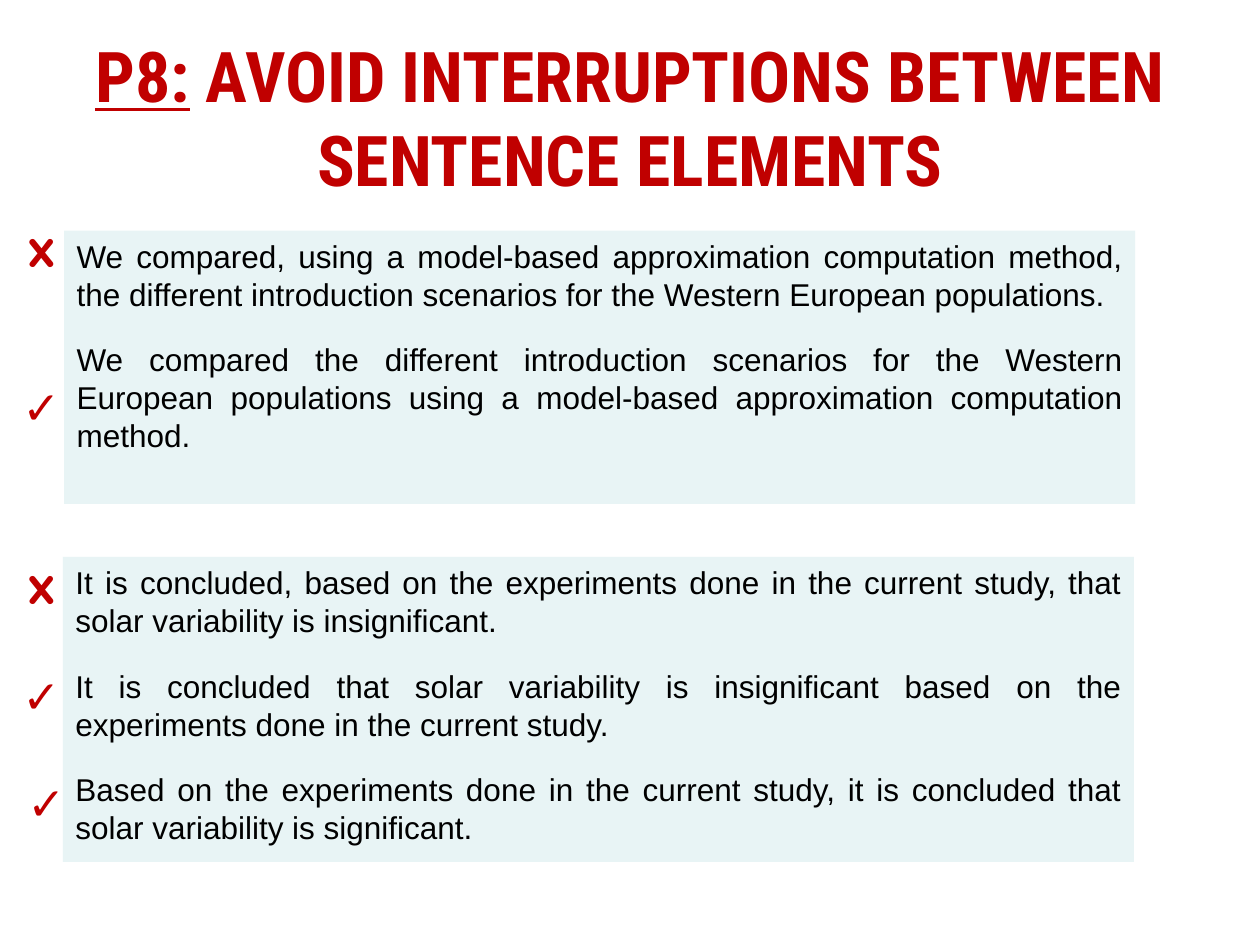
from dataclasses import dataclass
from typing import Any

from lxml.etree import SubElement
from pptx import Presentation
from pptx.dml.color import RGBColor
from pptx.enum.shapes import MSO_SHAPE as Shape
from pptx.enum.text import MSO_ANCHOR as Anchor, PP_ALIGN as Align
from pptx.oxml.ns import qn
from pptx.util import Inches, Pt

RED = RGBColor(0xC0, 0x00, 0x00)
BLACK = RGBColor(0x00, 0x00, 0x00)
PALE_TEAL = RGBColor(0xBB, 0xE0, 0xE3)

FIRST_EXAMPLE = [
    "We compared, using a model-based approximation computation method, "
    "the different introduction scenarios for the Western European populations.",
    "We compared the different introduction scenarios for the Western European "
    "populations using a model-based approximation computation method.",
]
SECOND_EXAMPLE = [
    "It is concluded, based on the experiments done in the current study, "
    "that solar variability is insignificant.",
    "It is concluded that solar variability is insignificant "
    "based on the experiments done in the current study.",
    "Based on the experiments done in the current study, "
    "it is concluded that solar variability is significant.",
]


@dataclass
class SlideWriter:
    """Draws the title, example panels and verdict marks on one page."""

    page: Any
    title_font: str = "Roboto Condensed"
    body_font: str = "Arial"
    mark_font: str = "Quicksand"

    def style(self, para, name, size, color, bold=False):
        font = para.font
        font.name, font.size, font.bold = name, Pt(size), bold
        font.color.rgb = color

    def textbox(self, left, top, width, height):
        box = self.page.shapes.add_textbox(
            Inches(left), Inches(top), Inches(width), Inches(height))
        box.text_frame.word_wrap = True
        return box.text_frame

    def title(self, label, wording):
        frame = self.textbox(0.5, 0.3, 9, 1.25)
        frame.vertical_anchor = Anchor.MIDDLE
        para = frame.paragraphs[0]
        para.alignment = Align.CENTER
        self.style(para, self.title_font, 40, RED, bold=True)
        span = para.add_run()
        span.text = label
        span.font.underline = True
        para.add_run().text = wording

    def panel(self, left, top, height, sentences):
        box = self.page.shapes.add_shape(
            Shape.RECTANGLE, Inches(left), Inches(top), Inches(8.5), Inches(height))
        box.shadow.inherit = False
        box.line.fill.background()
        box.fill.solid()
        box.fill.fore_color.rgb = PALE_TEAL
        color = box.fill._xPr.find(qn("a:solidFill"))[0]
        SubElement(color, qn("a:alpha")).set("val", "33000")
        frame = box.text_frame
        frame.word_wrap = True
        frame.vertical_anchor = Anchor.TOP
        for index, sentence in enumerate(sentences):
            para = frame.paragraphs[0] if index == 0 else frame.add_paragraph()
            para.text = sentence
            para.alignment = Align.JUSTIFY
            if index:
                para.space_before = Pt(16)
            self.style(para, self.body_font, 18, BLACK)

    def mark(self, symbol, left, top, width, height, size):
        para = self.textbox(left, top, width, height).paragraphs[0]
        para.text = symbol
        self.style(para, self.mark_font, size, RED, bold=True)

    def cross(self, top):
        self.mark("x", 0.13, top, 0.37, 0.61, 30)

    def check(self, left, top):
        self.mark("✓", left, top, 0.56, 0.54, 26)


def main():
    deck = Presentation()
    deck.slide_width, deck.slide_height = Inches(10), Inches(7.5)
    writer = SlideWriter(deck.slides.add_slide(deck.slide_layouts[6]))
    writer.title("P8:", " AVOID INTERRUPTIONS BETWEEN SENTENCE ELEMENTS")
    writer.panel(0.51, 1.83, 2.17, FIRST_EXAMPLE)
    writer.panel(0.5, 4.42, 2.42, SECOND_EXAMPLE)
    for top in (1.66, 4.33):
        writer.cross(top)
    for left, top in ((0.08, 2.96), (0.08, 5.25), (0.12, 6.1)):
        writer.check(left, top)
    deck.save("out.pptx")


if __name__ == "__main__":
    main()
